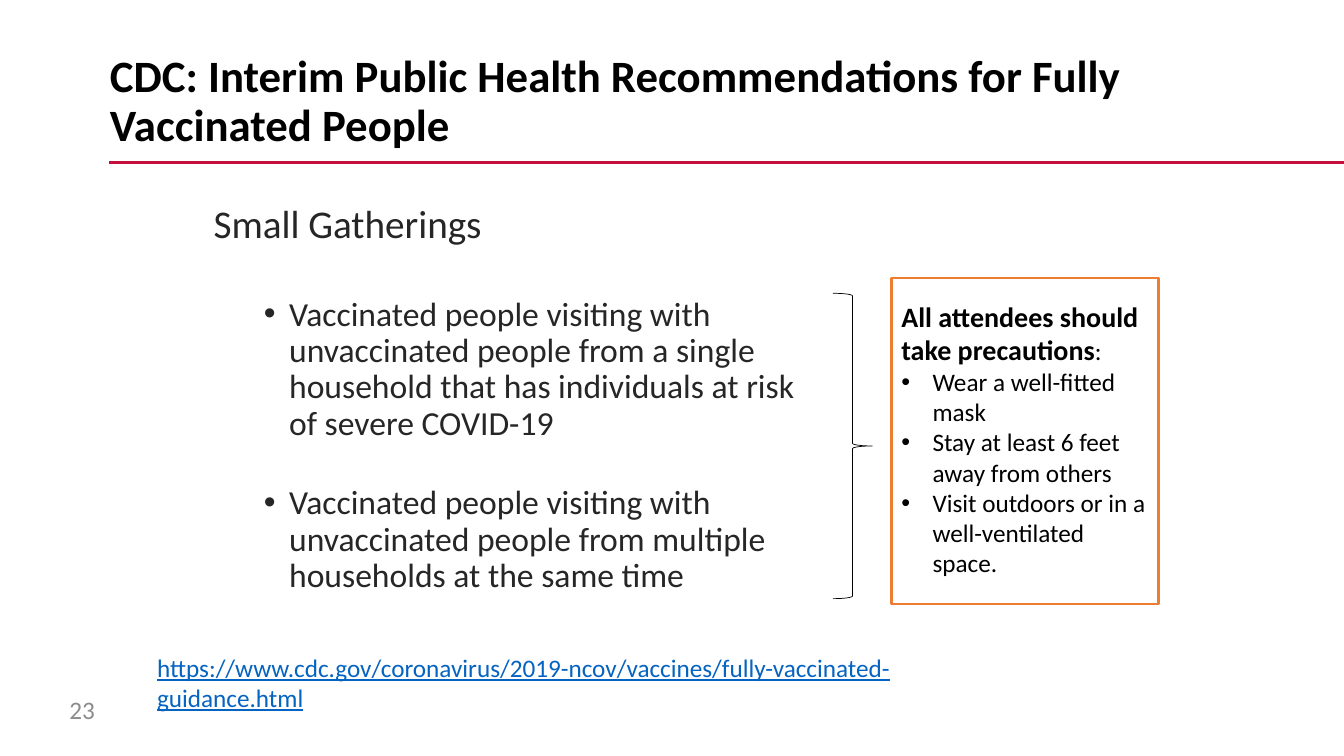
from lxml import etree
from pptx import Presentation
from pptx.dml.color import RGBColor
from pptx.enum.shapes import MSO_CONNECTOR, MSO_SHAPE
from pptx.enum.text import MSO_ANCHOR, PP_ALIGN
from pptx.oxml.ns import qn
from pptx.util import Inches, Pt

LINE = MSO_CONNECTOR.STRAIGHT
RECT = MSO_SHAPE.RECTANGLE
BRACE = MSO_SHAPE.RIGHT_BRACE
TOP = MSO_ANCHOR.TOP
MID = MSO_ANCHOR.MIDDLE
LEFT = PP_ALIGN.LEFT
FACE = "Calibri"
BLACK = "000000"
WHITE = "FFFFFF"
RED = "C40E3E"
ORANGE = "ED7D31"
DARK = "262626"
GREY = "8C8C8C"
BLUE = "0563C1"


def tint(color, code):
    color.rgb = RGBColor.from_string(code)


def style(font, size, color, bold=False, under=False):
    font.name = FACE
    font.size = Pt(size)
    font.bold = bold
    font.underline = under
    tint(font.color, color)


def write(frame, text, size=18, color=BLACK, bold=False, under=False,
          hang=None, gap=0, lead=1, tail=None, more=False):
    para = frame.add_paragraph() if more else frame.paragraphs[0]
    para.alignment = LEFT
    para.line_spacing = lead
    para.space_before = Pt(gap)
    if hang:
        left, back = hang
        props = para._p.get_or_add_pPr()
        props.set("marL", str(Inches(left)))
        props.set("indent", str(-Inches(back)))
        etree.SubElement(props, qn("a:buFont"), typeface="Arial")
        etree.SubElement(props, qn("a:buChar"), char="•")
    run = para.add_run()
    run.text = text
    style(run.font, size, color, bold, under)
    if tail:
        end = para.add_run()
        end.text = tail
        style(end.font, 18, color)


class Deck:
    def __init__(self):
        self.show = Presentation()
        self.show.slide_width = Inches(13.33)
        self.show.slide_height = Inches(7.5)
        self.slide = self.show.slides.add_slide(self.show.slide_layouts[5])
        self.shapes = self.slide.shapes

    def place(self, x, y, w, h):
        wide, high = self.show.slide_width, self.show.slide_height
        return [int(part * side / 100) for part, side in
                zip((x, y, w, h), (wide, high, wide, high))]

    def title(self, area, text, **form):
        head = self.shapes.title
        head.left, head.top, head.width, head.height = self.place(*area)
        head.text_frame.word_wrap = True
        head.text_frame.vertical_anchor = MID
        write(head.text_frame, text, **form)

    def rule(self, x, y, end, color, width):
        left, top, right, base = self.place(x, y, end, y)
        line = self.shapes.add_connector(LINE, left, top, right, base)
        tint(line.line.color, color)
        line.line.width = Pt(width)
        etree.SubElement(line._element.spPr, qn("a:effectLst"))

    def text(self, area, anchor=TOP):
        frame = self.shapes.add_textbox(*self.place(*area)).text_frame
        frame.word_wrap = True
        frame.vertical_anchor = anchor
        return frame

    def shape(self, kind, area, color, width, fill=None):
        item = self.shapes.add_shape(kind, *self.place(*area))
        item.shadow.inherit = False
        if fill:
            item.fill.solid()
            tint(item.fill.fore_color, fill)
        else:
            item.fill.background()
        tint(item.line.color, color)
        item.line.width = Pt(width)
        return item


def main():
    deck = Deck()
    deck.rule(8.1, 21.47, 100, RED, 2.25)
    deck.title((7.43, 3.87, 91.22, 19.33),
               "CDC: Interim Public Health Recommendations for Fully "
               "Vaccinated People", size=32, bold=True, lead=0.9)

    body = deck.text((15.15, 26.4, 45.76, 63.47))
    write(body, "Small Gatherings", size=28, color=DARK, lead=0.9)
    cases = (
        ("Vaccinated people visiting with unvaccinated people from a single "
         "household that has individuals at risk of severe COVID-19", 36),
        ("Vaccinated people visiting with unvaccinated people from multiple "
         "households at the same time", 31),
    )
    for case, gap in cases:
        write(body, case, size=24, color=DARK, hang=(0.75, 0.25), gap=gap,
              lead=0.9, more=True)

    brace = deck.shape(BRACE, (61.97, 38.8, 2.93, 40.4), BLACK, 0.5)
    brace.adjustments[0] = 0.065
    brace.adjustments[1] = 0.5

    card = deck.shape(RECT, (66.32, 36.8, 19.88, 43.07), ORANGE, 1.75, WHITE)
    care = card.text_frame
    care.word_wrap = True
    care.vertical_anchor = MID
    care.margin_bottom = Inches(0.1)
    write(care, "All attendees should take precautions", size=20, bold=True,
          tail=":")
    for step in ("Wear a well-fitted mask",
                 "Stay at least 6 feet away from others",
                 "Visit outdoors or in a well-ventilated space."):
        write(care, step, hang=(0.31, 0.31), more=True)

    write(deck.text((10.95, 85.6, 58.96, 13.47)),
          "https://www.cdc.gov/coronavirus/2019-ncov/vaccines/"
          "fully-vaccinated-guidance.html", color=BLUE, under=True)
    write(deck.text((4.43, 91.2, 4.43, 5.33), MID), "23", color=GREY)
    deck.show.save("out.pptx")


if __name__ == "__main__":
    main()
